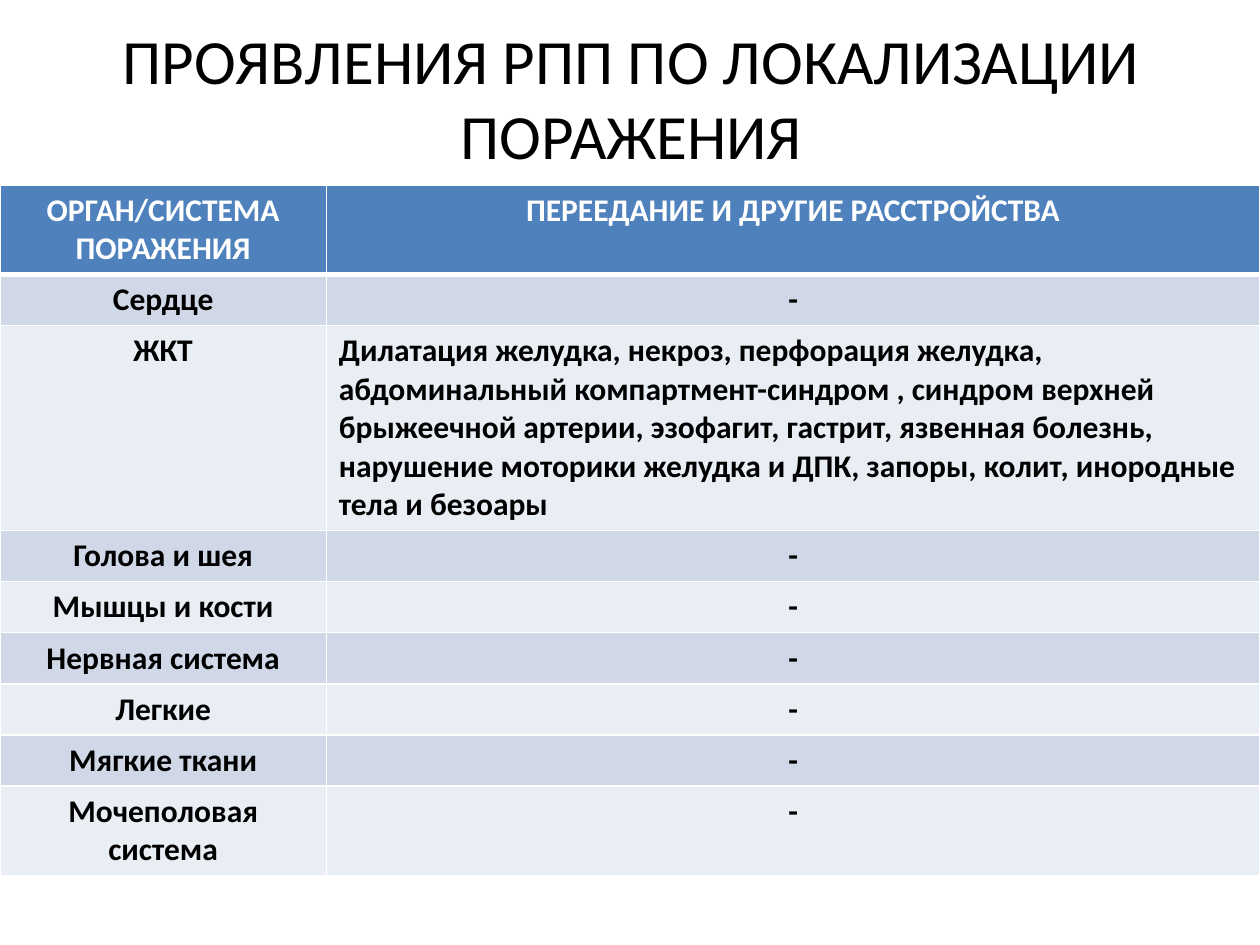
from lxml.etree import SubElement
from pptx import Presentation
from pptx.dml.color import RGBColor
from pptx.enum.text import MSO_ANCHOR, PP_ALIGN
from pptx.oxml.ns import qn
from pptx.util import Cm, Pt

COLORS = {
    "header": "4F81BD",
    "band_dark": "D0D8E8",
    "band_light": "E9EDF4",
    "white": "FFFFFF",
    "black": "000000",
}
FONT = "Calibri"
TITLE = "ПРОЯВЛЕНИЯ РПП ПО ЛОКАЛИЗАЦИИ ПОРАЖЕНИЯ"
HEADINGS = ("ОРГАН/СИСТЕМА ПОРАЖЕНИЯ", "ПЕРЕЕДАНИЕ И ДРУГИЕ РАССТРОЙСТВА")
NONE = "-"
DISORDERS = (
    ("Сердце", NONE),
    ("ЖКТ", "Дилатация желудка, некроз, перфорация желудка, абдоминальный "
            "компартмент-синдром , синдром верхней брыжеечной артерии, эзофагит, "
            "гастрит, язвенная болезнь, нарушение моторики желудка и ДПК, запоры, "
            "колит, инородные тела и безоары"),
    ("Голова и шея", NONE),
    ("Мышцы и кости", NONE),
    ("Нервная система", NONE),
    ("Легкие", NONE),
    ("Мягкие ткани", NONE),
    ("Мочеполовая система", NONE),
)
ROW_HEIGHT = 1.03
ORGAN_SHARE = 0.259


def write_text(frame, text, size, color, bold=False, align=PP_ALIGN.CENTER):
    """Write one formatted run into the first paragraph of a text frame."""
    para = frame.paragraphs[0]
    para.alignment = align
    span = para.add_run()
    span.text = text
    span.font.name = FONT
    span.font.size = Pt(size)
    span.font.bold = bold
    span.font.color.rgb = RGBColor.from_string(COLORS[color])


def set_borders(cell, top, bottom):
    """Give a cell white borders, with top and bottom widths in points."""
    properties = cell._tc.get_or_add_tcPr()
    for side, width in (("L", 1), ("R", 1), ("T", top), ("B", bottom)):
        line = SubElement(properties, qn(f"a:ln{side}"), w=str(Pt(width)))
        fill = SubElement(line, qn("a:solidFill"))
        SubElement(fill, qn("a:srgbClr"), val=COLORS["white"])


def add_title(page, left, top, width, height):
    """Add the centred slide title."""
    box = page.shapes.add_textbox(Cm(left), Cm(top), Cm(width), Cm(height))
    frame = box.text_frame
    frame.word_wrap = True
    frame.vertical_anchor = MSO_ANCHOR.MIDDLE
    write_text(frame, TITLE, 36, "black")


def add_disorder_table(page, left, top, width):
    """Add the banded table of disorders by organ."""
    rows = (HEADINGS, *DISORDERS)
    table = page.shapes.add_table(
        len(rows), len(HEADINGS), Cm(left), Cm(top), Cm(width), Cm(ROW_HEIGHT * len(rows))
    ).table
    for column, share in zip(table.columns, (ORGAN_SHARE, 1 - ORGAN_SHARE)):
        column.width = Cm(width * share)
    for index, texts in enumerate(rows):
        is_header = index == 0
        band = "header" if is_header else "band_dark" if index % 2 else "band_light"
        for column, text in enumerate(texts):
            cell = table.cell(index, column)
            set_borders(cell, 3 if index == 1 else 1, 3 if is_header else 1)
            cell.fill.solid()
            cell.fill.fore_color.rgb = RGBColor.from_string(COLORS[band])
            is_description = column == 1 and not is_header and text != NONE
            align = PP_ALIGN.LEFT if is_description else PP_ALIGN.CENTER
            color = "white" if is_header else "black"
            write_text(cell.text_frame, text, 18, color, True, align)


def main():
    """Build and save the one-slide deck."""
    deck = Presentation()
    deck.slide_width, deck.slide_height = Cm(25.4), Cm(19.05)
    page = deck.slides.add_slide(deck.slide_layouts[6])
    add_disorder_table(page, 0, 3.73, 25.4)
    add_title(page, 1.3, 0.36, 22.86, 3.18)
    deck.save("out.pptx")


if __name__ == "__main__":
    main()
